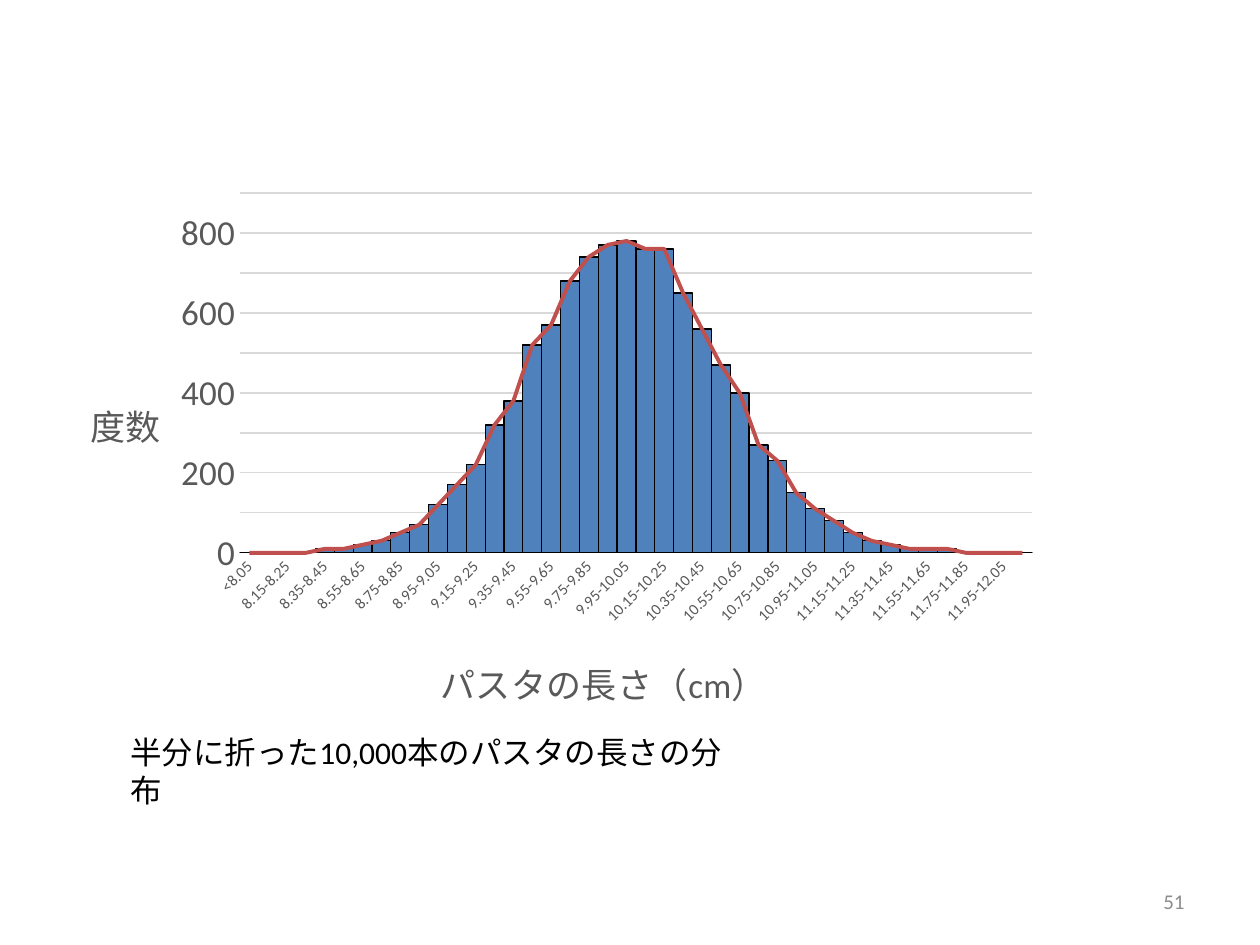
from lxml import etree
from pptx import Presentation
from pptx.chart.data import CategoryChartData
from pptx.dml.color import RGBColor
from pptx.enum.chart import XL_CHART_TYPE as ChartType, XL_TICK_MARK as TickMark
from pptx.enum.text import MSO_ANCHOR as Anchor, PP_ALIGN as Align
from pptx.oxml import parse_xml
from pptx.oxml.ns import nsdecls, qn
from pptx.util import Pt

EMU_PER_PX = 914400 / 126
FONT = "Calibri"
GRAY, LIGHT, BLACK = "595959", "D9D9D9", "000000"
COUNTS = [0, 0, 0, 0, 10, 10, 20, 30, 50, 70, 120, 170, 220, 320,
          380, 520, 570, 680, 740, 770, 780, 760, 760, 650, 560, 470, 400, 270,
          230, 150, 110, 80, 50, 30, 20, 10, 10, 10, 0, 0, 0, 0]
EDGES = [f"{(805 + 10 * step) / 100:.2f}" for step in range(len(COUNTS) - 1)]
CLASSES = ([f"<{EDGES[0]}"]
           + [f"{low}-{high}" for low, high in zip(EDGES, EDGES[1:])]
           + [f">{EDGES[-1]}"])


def px(value):
    return round(value * EMU_PER_PX)


def color(value):
    return RGBColor.from_string(value)


def set_font(font, size, hex_color):
    font.name, font.size, font.bold = FONT, Pt(size), False
    font.color.rgb = color(hex_color)


def set_line(line, hex_color, width):
    line.color.rgb = color(hex_color)
    line.width = Pt(width)


def add_text(slide, box, text, size, hex_color, align=Align.LEFT, anchor=Anchor.TOP):
    frame = slide.shapes.add_textbox(*map(px, box)).text_frame
    frame.word_wrap = True
    frame.vertical_anchor = anchor
    paragraph = frame.paragraphs[0]
    paragraph.alignment = align
    run = paragraph.add_run()
    run.text = text
    set_font(run.font, size, hex_color)


def set_layout(parent, box, left, top, width=None, height=None):
    """Place a chart part at px offsets inside the chart box."""
    for old in parent.findall(qn("c:layout")):
        parent.remove(old)
    values = [("xMode", "edge"), ("yMode", "edge"),
              ("x", round(left / box[2], 4)), ("y", round(top / box[3], 4))]
    if width:
        values.insert(0, ("layoutTarget", "inner"))
        values += [("w", round(width / box[2], 4)), ("h", round(height / box[3], 4))]
    layout = etree.Element(qn("c:layout"))
    manual = etree.SubElement(layout, qn("c:manualLayout"))
    for name, value in values:
        etree.SubElement(manual, qn(f"c:{name}"), val=str(value))
    text = parent.find(qn("c:tx"))
    parent.insert(0 if text is None else 1, layout)


def add_axis_title(axis, box, text, left, top):
    title = axis.axis_title
    frame = title.text_frame
    run = frame.paragraphs[0].add_run()
    run.text = text
    set_font(run.font, 20, GRAY)
    body = title._element.find(".//" + qn("a:bodyPr"))
    body.set("rot", "0")
    body.set("vert", "horz")
    set_layout(title._element, box, left, top)


def move_to_line_plot(chart, series):
    """Draw one column series as a line on the same axes."""
    bars = chart.plots[0]._element
    element = series._element
    for bar_only in element.findall(qn("c:invertIfNegative")):
        element.remove(bar_only)
    marker = parse_xml(f'<c:marker {nsdecls("c")}><c:symbol val="none"/></c:marker>')
    element.find(qn("c:spPr")).addnext(marker)
    etree.SubElement(element, qn("c:smooth"), val="0")
    lines = parse_xml(f'<c:lineChart {nsdecls("c")}><c:grouping val="standard"/>'
                      '<c:varyColors val="0"/><c:marker val="1"/></c:lineChart>')
    lines.insert(2, element)
    for axis_id in bars.findall(qn("c:axId")):
        etree.SubElement(lines, qn("c:axId"), val=axis_id.get("val"))
    bars.addnext(lines)


def style_category_axis(axis, box):
    axis.major_tick_mark = axis.minor_tick_mark = TickMark.NONE
    axis.has_major_gridlines = False
    set_line(axis.format.line, LIGHT, 0.75)
    set_font(axis.tick_labels.font, 9, GRAY)
    element = axis._element
    element.find(qn("c:txPr")).find(qn("a:bodyPr")).set("rot", "-2700000")
    skip = etree.Element(qn("c:tickLblSkip"), val="2")
    element.find(qn("c:noMultiLvlLbl")).addprevious(skip)
    add_axis_title(axis, box, "パスタの長さ（cm）", 379, 464)


def style_value_axis(axis, box):
    axis.minimum_scale, axis.maximum_scale, axis.major_unit = 0, 900, 100
    axis.major_tick_mark = axis.minor_tick_mark = TickMark.NONE
    axis.format.line.fill.background()
    set_line(axis.major_gridlines.format.line, LIGHT, 0.75)
    set_font(axis.tick_labels.font, 20, GRAY)
    add_axis_title(axis, box, "度数", 29, 206)


def add_histogram(slide, box):
    data = CategoryChartData(number_format="General")
    data.categories = CLASSES
    for name in ("Series 1", "Series 2"):
        data.add_series(name, COUNTS)
    chart = slide.shapes.add_chart(ChartType.COLUMN_CLUSTERED, *map(px, box), data).chart
    chart.has_legend = chart.has_title = False
    set_font(chart.font, 10, BLACK)

    plot = chart.plots[0]
    plot.gap_width = 0
    plot.vary_by_categories = False
    columns, curve = plot.series
    columns.format.fill.solid()
    columns.format.fill.fore_color.rgb = color("4F81BD")
    set_line(columns.format.line, BLACK, 0.75)
    set_line(curve.format.line, "C0504D", 2.25)
    move_to_line_plot(chart, curve)

    style_category_axis(chart.category_axis, box)
    style_value_axis(chart.value_axis, box)
    plot_area = plot._element.getparent()
    set_layout(plot_area, box, 185, 10, 792, 360)


def main():
    presentation = Presentation()
    presentation.slide_width, presentation.slide_height = px(1260), px(945)
    slide = presentation.slides.add_slide(presentation.slide_layouts[6])
    add_text(slide, (903, 876, 294, 50), "51", 12, "8C8C8C", Align.RIGHT, Anchor.MIDDLE)
    add_histogram(slide, (55, 183, 997, 538))
    add_text(slide, (118, 727, 626, 50), "半分に折った10,000本のパスタの長さの分布", 18, BLACK)
    presentation.save("out.pptx")


if __name__ == "__main__":
    main()
